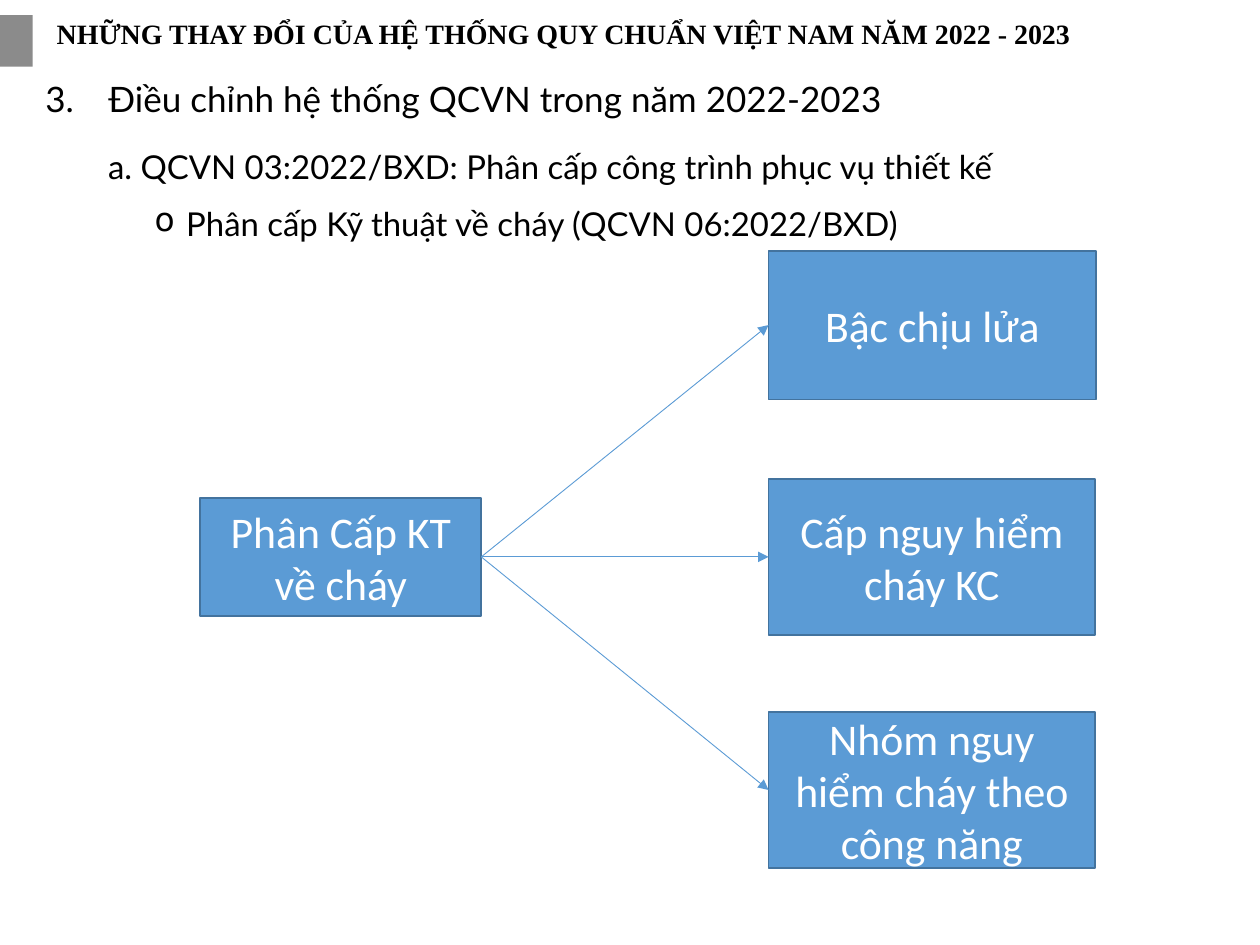
"""Build the slide on fire classification under the Vietnamese building codes."""
from dataclasses import dataclass

from lxml import etree
from pptx import Presentation
from pptx.dml.color import RGBColor
from pptx.enum import shapes, text
from pptx.oxml import ns
from pptx.util import Inches, Pt

BLACK = RGBColor(0x00, 0x00, 0x00)
WHITE = RGBColor(0xFF, 0xFF, 0xFF)
GREY = RGBColor(0x80, 0x80, 0x80)
BLUE = RGBColor(0x5B, 0x9B, 0xD5)
DARK_BLUE = RGBColor(0x43, 0x73, 0x9E)
RIGHT_SIDE, LEFT_SIDE = 3, 1


@dataclass
class Frame:
    left: float
    top: float
    width: float
    height: float

    def lengths(self) -> list:
        return [Inches(v) for v in (self.left, self.top, self.width, self.height)]


@dataclass
class Line:
    wording: str
    frame: Frame
    size: float
    spacing: float
    font: str = "Lato"
    bold: bool = False
    indent: float = 0
    bullet: tuple = ("a:buNone", {})


@dataclass
class Node:
    wording: str
    frame: Frame


HEADING = Line("NHỮNG THAY ĐỔI CỦA HỆ THỐNG QUY CHUẨN VIỆT NAM NĂM 2022 - 2023",
               Frame(0.35, 0.11, 8.94, 0.42), 16, 0.9, "Times New Roman", True)
SECTION = Line("Điều chỉnh hệ thống QCVN trong năm 2022-2023",
               Frame(0.26, 0.6, 8.69, 0.35), 20, 0.9, indent=0.5,
               bullet=("a:buAutoNum", {"type": "arabicPeriod", "startAt": "3"}))
DETAILS = [
    Line("Phân cấp Kỹ thuật về cháy (QCVN 06:2022/BXD)",
         Frame(1.13, 1.41, 8.6, 0.53), 18.8, 1.5, indent=0.25,
         bullet=("a:buChar", {"char": "o"})),
    Line("a. QCVN 03:2022/BXD: Phân cấp công trình phục vụ thiết kế",
         Frame(0.76, 0.96, 7.4, 0.63), 18.8, 1.5),
]
ROOT = Node("Phân Cấp KT về cháy", Frame(1.59, 3.95, 2.23, 0.94))
BRANCHES = [
    Node("Bậc chịu lửa", Frame(6.1, 1.99, 2.6, 1.18)),
    Node("Cấp nguy hiểm cháy KC", Frame(6.1, 3.8, 2.59, 1.24)),
    Node("Nhóm nguy hiểm cháy theo công năng", Frame(6.1, 5.65, 2.59, 1.24)),
]


def add_child(parent, tag: str, **attributes: str):
    return etree.SubElement(parent, ns.qn(tag), attributes)


def style_font(paragraph, name: str, size: float, color: RGBColor, bold: bool = False) -> None:
    font = paragraph.font
    font.name, font.size, font.bold = name, Pt(size), bold
    font.color.rgb = color


def write_line(holder, line: Line) -> None:
    holder.left, holder.top, holder.width, holder.height = line.frame.lengths()
    frame = holder.text_frame
    frame.text = line.wording
    frame.word_wrap = True
    frame.auto_size = text.MSO_AUTO_SIZE.NONE
    frame.vertical_anchor = text.MSO_ANCHOR.TOP
    paragraph = frame.paragraphs[0]
    paragraph.alignment = text.PP_ALIGN.LEFT
    paragraph.line_spacing = line.spacing
    paragraph.space_before = Pt(0)
    properties = paragraph._p.get_or_add_pPr()
    properties.set("marL", str(Inches(line.indent)))
    properties.set("indent", str(-Inches(line.indent)))
    tag, attributes = line.bullet
    add_child(properties, tag, **attributes)
    style_font(paragraph, line.font, line.size, BLACK, line.bold)


def add_rectangle(slide, frame: Frame, color: RGBColor):
    rectangle = slide.shapes.add_shape(shapes.MSO_SHAPE.RECTANGLE, *frame.lengths())
    rectangle.shadow.inherit = False
    rectangle.fill.solid()
    rectangle.fill.fore_color.rgb = color
    return rectangle


def add_marker(slide) -> None:
    marker = add_rectangle(slide, Frame(0, 0.12, 0.26, 0.41), GREY)
    marker.line.fill.background()
    color = marker._element.spPr.find(ns.qn("a:solidFill"))[0]
    add_child(color, "a:alpha", val="91000")


def add_node(slide, node: Node):
    box = add_rectangle(slide, node.frame, BLUE)
    box.line.color.rgb = DARK_BLUE
    box.line.width = Pt(1)
    frame = box.text_frame
    frame.text = node.wording
    frame.word_wrap = True
    frame.vertical_anchor = text.MSO_ANCHOR.MIDDLE
    paragraph = frame.paragraphs[0]
    paragraph.alignment = text.PP_ALIGN.CENTER
    style_font(paragraph, "Calibri", 25, WHITE)
    return box


def add_arrow(slide, start, end) -> None:
    arrow = slide.shapes.add_connector(shapes.MSO_CONNECTOR.STRAIGHT, 0, 0, 0, 0)
    arrow.begin_connect(start, RIGHT_SIDE)
    arrow.end_connect(end, LEFT_SIDE)
    arrow.line.color.rgb = BLUE
    arrow.line.width = Pt(0.5)
    add_child(arrow.line._get_or_add_ln(), "a:tailEnd", type="triangle")
    add_child(arrow._element.spPr, "a:effectLst")


def main() -> None:
    deck = Presentation()
    deck.slide_width, deck.slide_height = Inches(10), Inches(7.5)
    slide = deck.slides.add_slide(deck.slide_layouts[1])
    add_marker(slide)
    write_line(slide.shapes.title, HEADING)
    write_line(slide.placeholders[1], SECTION)
    for detail in DETAILS:
        write_line(slide.shapes.add_textbox(*detail.frame.lengths()), detail)
    root = add_node(slide, ROOT)
    for branch in BRANCHES:
        add_arrow(slide, root, add_node(slide, branch))
    deck.save("out.pptx")


if __name__ == "__main__":
    main()
